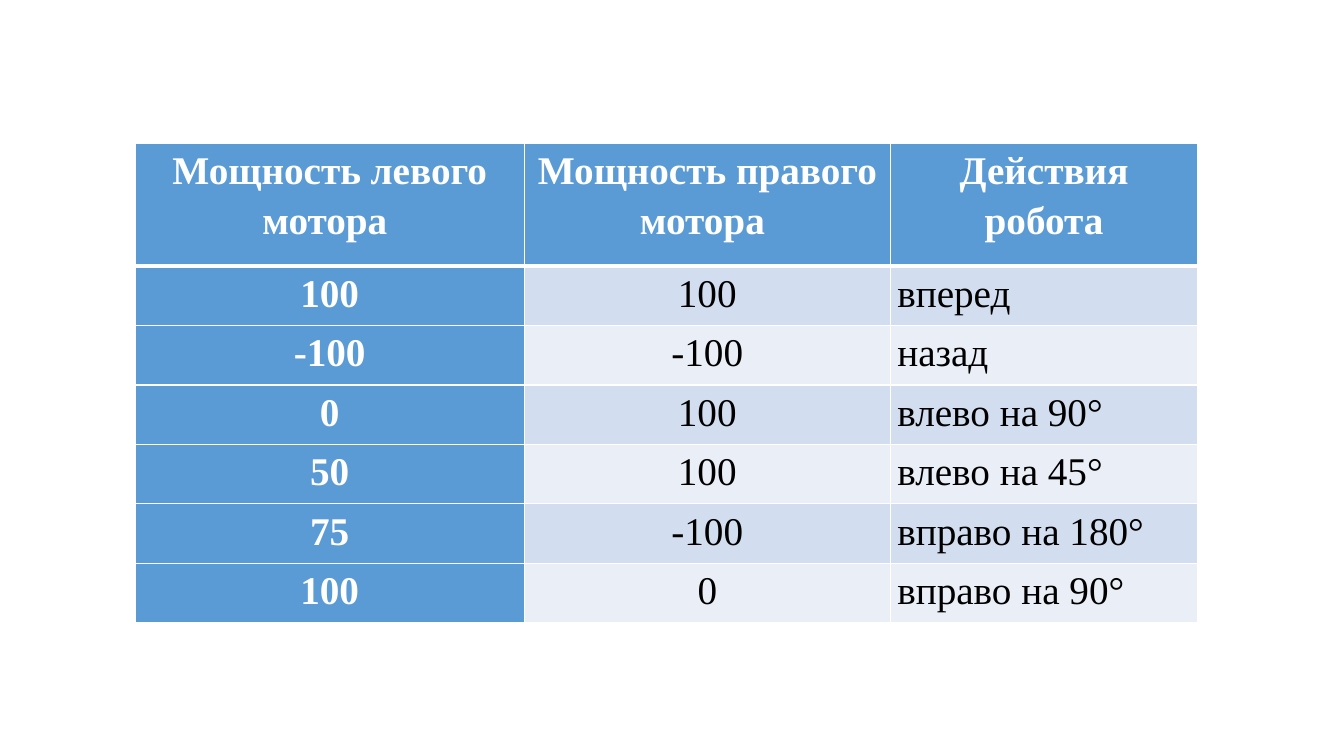
"""Build a slide with a table of motor powers and robot actions."""
from dataclasses import dataclass

import lxml.etree
import pptx
import pptx.dml.color
import pptx.enum.text
import pptx.oxml.ns
import pptx.util

Inches = pptx.util.Inches
ALIGN = pptx.enum.text.PP_ALIGN


@dataclass(frozen=True)
class Theme:
    font: str = "Times New Roman"
    size: int = 28
    line_spacing: float = 1.15
    accent: str = "5B9BD5"
    bands: tuple = ("D2DEEF", "EAEFF7")
    light: str = "FFFFFF"
    dark: str = "000000"
    thin: int = 1
    thick: int = 3


THEME = Theme()
HEADINGS = ("Мощность левого мотора ", "Мощность правого мотора ", "Действия робота")
COMMANDS = (
    ("100", "100", "вперед"),
    ("-100", "-100", "назад"),
    ("0", "100", "влево на 90°"),
    ("50", "100", "влево на 45°"),
    ("75", "-100", "вправо на 180°"),
    ("100", "0", "вправо на 90°"),
)
COLUMN_WIDTHS = (3.86, 3.63, 3.05)
HEADING_HEIGHT, COMMAND_HEIGHT = 1.22, 0.59


def rgb(code):
    return pptx.dml.color.RGBColor.from_string(code)


def write_text(frame, text, *, color, bold=False, align=ALIGN.LEFT):
    paragraph = frame.paragraphs[0]
    paragraph.alignment = align
    paragraph.line_spacing = THEME.line_spacing
    run = paragraph.add_run()
    run.text = text
    run.font.name = THEME.font
    run.font.size = pptx.util.Pt(THEME.size)
    run.font.bold = bold
    run.font.color.rgb = rgb(color)


def add_border(cell, side, width):
    qn = pptx.oxml.ns.qn
    properties = cell._tc.get_or_add_tcPr()
    line = lxml.etree.SubElement(properties, qn(f"a:ln{side}"), w=str(pptx.util.Pt(width)))
    fill = lxml.etree.SubElement(line, qn("a:solidFill"))
    lxml.etree.SubElement(fill, qn("a:srgbClr"), val=THEME.light)


def fill_cell(cell, text, row, column):
    is_label = row == 0 or column == 0
    cell.margin_left = cell.margin_right = Inches(0.07)
    cell.margin_top = cell.margin_bottom = 0
    widths = {"L": THEME.thin, "R": THEME.thin,
              "T": THEME.thick if row == 1 else THEME.thin,
              "B": THEME.thick if row == 0 else THEME.thin}
    for side, width in widths.items():
        add_border(cell, side, width)
    cell.fill.solid()
    cell.fill.fore_color.rgb = rgb(THEME.accent if is_label else THEME.bands[(row - 1) % 2])
    write_text(cell.text_frame, text, bold=is_label,
               color=THEME.light if is_label else THEME.dark,
               align=ALIGN.CENTER if row == 0 or column < 2 else ALIGN.LEFT)


def add_command_table(slide, left, top):
    rows = (HEADINGS, *COMMANDS)
    heights = [HEADING_HEIGHT] + [COMMAND_HEIGHT] * len(COMMANDS)
    table = slide.shapes.add_table(
        len(rows), len(HEADINGS), Inches(left), Inches(top),
        Inches(sum(COLUMN_WIDTHS)), Inches(sum(heights))).table
    for column, width in zip(table.columns, COLUMN_WIDTHS):
        column.width = Inches(width)
    for row, height in zip(table.rows, heights):
        row.height = Inches(height)
    for row, texts in enumerate(rows):
        for column, text in enumerate(texts):
            fill_cell(table.cell(row, column), text, row, column)


def main():
    deck = pptx.Presentation()
    deck.slide_width, deck.slide_height = Inches(13.33), Inches(7.5)
    slide = deck.slides.add_slide(deck.slide_layouts[6])
    add_command_table(slide, left=1.34, top=1.42)
    deck.save("out.pptx")


if __name__ == "__main__":
    main()
